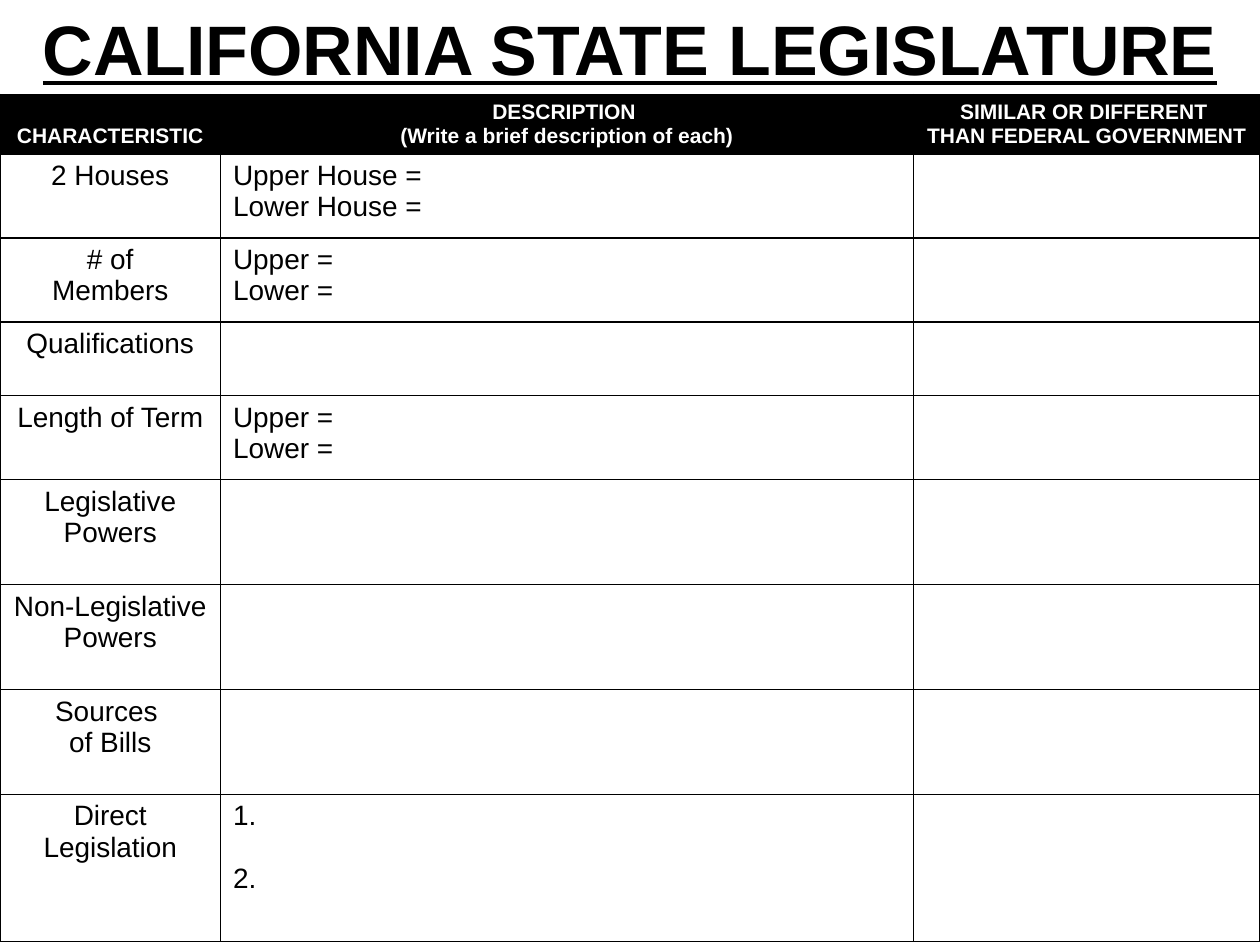
from lxml import etree
from pptx import Presentation
from pptx.dml.color import RGBColor
from pptx.enum.text import MSO_ANCHOR, MSO_AUTO_SIZE, PP_ALIGN
from pptx.oxml.ns import qn
from pptx.util import Pt

CENTER, LEFT = PP_ALIGN.CENTER, PP_ALIGN.LEFT
TOP, MIDDLE, BOTTOM = MSO_ANCHOR.TOP, MSO_ANCHOR.MIDDLE, MSO_ANCHOR.BOTTOM
NO_AUTOFIT = MSO_AUTO_SIZE.NONE
TITLE_ONLY = 5
BLACK, WHITE = "000000", "FFFFFF"
FONT = "Arial"

COLUMN_WIDTHS = [126, 396, 198]
ROW_HEIGHTS = [30, 48, 48, 42, 48, 60, 60, 60, 84]
ROWS = [
    ["CHARACTERISTIC", "DESCRIPTION \n(Write a brief description of each)",
     "SIMILAR OR DIFFERENT \nTHAN FEDERAL GOVERNMENT"],
    ["2 Houses", "Upper House =\nLower House =", ""],
    ["# of\nMembers", "Upper =\nLower =", ""],
    ["Qualifications", "", ""],
    ["Length of Term", "Upper =\nLower =", ""],
    ["Legislative\nPowers", "", ""],
    ["Non-Legislative\nPowers", "", ""],
    ["Sources \nof Bills", "", ""],
    ["Direct\nLegislation", "1.\n2.", ""],
]


def color(value):
    return RGBColor.from_string(value)


def write_text(frame, text, size, text_color, align, bold=False, underline=False):
    frame.text = text
    for paragraph in frame.paragraphs:
        paragraph.alignment = align
        font = paragraph.font
        font.name = FONT
        font.size = Pt(size)
        font.bold = bold
        font.underline = underline
        font.color.rgb = color(text_color)


def add_borders(cell):
    properties = cell._tc.get_or_add_tcPr()
    for side in ("a:lnL", "a:lnR", "a:lnT", "a:lnB"):
        line = etree.SubElement(properties, qn(side), w=str(Pt(1)))
        fill = etree.SubElement(line, qn("a:solidFill"))
        etree.SubElement(fill, qn("a:srgbClr"), val=BLACK)


def format_cell(cell, text, is_header, align):
    add_borders(cell)
    cell.fill.solid()
    cell.fill.fore_color.rgb = color(BLACK if is_header else WHITE)
    cell.vertical_anchor = BOTTOM if is_header else TOP
    write_text(cell.text_frame, text, 12 if is_header else 16,
               WHITE if is_header else BLACK, align, bold=is_header)


def add_worksheet(page):
    table = page.shapes.add_table(
        len(ROWS), len(COLUMN_WIDTHS), Pt(0), Pt(54),
        Pt(sum(COLUMN_WIDTHS)), Pt(sum(ROW_HEIGHTS))).table
    for column, width in zip(table.columns, COLUMN_WIDTHS):
        column.width = Pt(width)
    for row, height in zip(table.rows, ROW_HEIGHTS):
        row.height = Pt(height)
    for row_index, texts in enumerate(ROWS):
        is_header = row_index == 0
        for column_index, text in enumerate(texts):
            align = CENTER if is_header or column_index == 0 else LEFT
            format_cell(table.cell(row_index, column_index), text, is_header, align)
    numbered_answers = table.cell(len(ROWS) - 1, 1).text_frame
    numbered_answers.paragraphs[1].space_before = Pt(18)


def add_title(page, text):
    title = page.shapes.title
    title.left, title.top, title.width, title.height = Pt(0), Pt(0), Pt(720), Pt(54)
    frame = title.text_frame
    frame.auto_size = NO_AUTOFIT
    frame.vertical_anchor = MIDDLE
    write_text(frame, text, 40, BLACK, CENTER, bold=True, underline=True)


def main():
    deck = Presentation()
    deck.slide_width, deck.slide_height = Pt(720), Pt(540)
    page = deck.slides.add_slide(deck.slide_layouts[TITLE_ONLY])
    add_title(page, "CALIFORNIA STATE LEGISLATURE")
    add_worksheet(page)
    deck.save("out.pptx")


if __name__ == "__main__":
    main()
